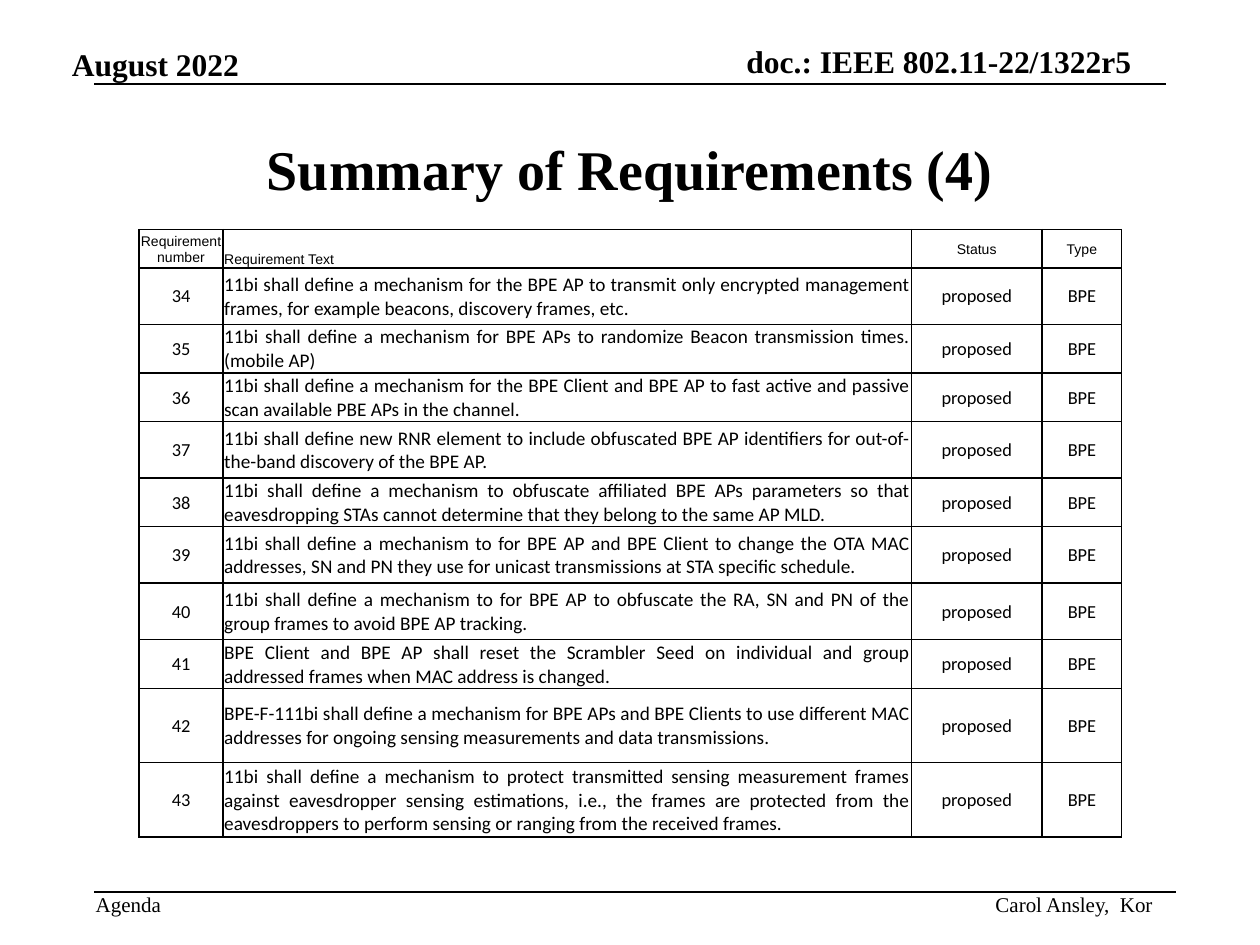
from lxml.etree import SubElement
from pptx import Presentation
from pptx.dml.color import RGBColor
from pptx.enum.shapes import MSO_CONNECTOR
from pptx.enum.text import MSO_ANCHOR as Anchor, PP_ALIGN as Align
from pptx.oxml.ns import qn
from pptx.util import Cm, Pt

BLACK = "000000"
SERIF, SANS, BODY = "Times New Roman", "Arial", "Calibri"

HEADINGS = ["Requirement number", "Requirement Text", "Status", "Type"]
FIRST_NUMBER = 34
STATUS, TYPE = "proposed", "BPE"
COLUMN_WIDTHS = [1.7, 13.87, 2.64, 1.6]
HEADING_HEIGHT, LOW, MEDIUM, HIGH = 0.77, 0.98, 1.14, 1.5
REQUIREMENTS = [
    (MEDIUM, "11bi shall define a mechanism for the BPE AP to transmit only encrypted "
             "management frames, for example beacons, discovery frames, etc."),
    (LOW, "11bi shall define a mechanism for BPE APs to randomize Beacon transmission "
          "times. (mobile AP)"),
    (LOW, "11bi shall define a mechanism for the BPE Client and BPE AP to fast active "
          "and passive scan available PBE APs in the channel."),
    (MEDIUM, "11bi shall define new RNR element to include obfuscated BPE AP identifiers "
             "for out-of-the-band discovery of the BPE AP."),
    (LOW, "11bi shall define a mechanism to obfuscate affiliated BPE APs parameters so "
          "that eavesdropping STAs cannot determine that they belong to the same AP MLD."),
    (MEDIUM, "11bi shall define a mechanism to for BPE AP and BPE Client to change the "
             "OTA MAC addresses, SN and PN they use for unicast transmissions at STA "
             "specific schedule."),
    (MEDIUM, "11bi shall define a mechanism to for BPE AP to obfuscate the RA, SN and PN "
             "of the group frames to avoid BPE AP tracking."),
    (LOW, "BPE Client and BPE AP shall reset the Scrambler Seed on individual and group "
          "addressed frames when MAC address is changed."),
    (HIGH, "BPE-F-111bi shall define a mechanism for BPE APs and BPE Clients to use "
           "different MAC addresses for ongoing sensing measurements and data "
           "transmissions."),
    (HIGH, "11bi shall define a mechanism to protect transmitted sensing measurement "
           "frames against eavesdropper sensing estimations, i.e., the frames are "
           "protected from the eavesdroppers to perform sensing or ranging from the "
           "received frames."),
]


def color(hex_value):
    return RGBColor.from_string(hex_value)


class SlideBuilder:
    def __init__(self, slide, ink=BLACK, line_width=1):
        self.slide = slide
        self.ink = ink
        self.line_width = Pt(line_width)

    def set_text(self, text_frame, text, size, font, align, bold=False):
        text_frame.text = text
        paragraph = text_frame.paragraphs[0]
        paragraph.alignment = align
        for run in paragraph.runs:
            run.font.size = Pt(size)
            run.font.name = font
            run.font.bold = bold
            run.font.color.rgb = color(self.ink)

    def text(self, box, text, size, align=Align.LEFT, anchor=Anchor.BOTTOM,
             bold=False, wrap=False):
        shape = self.slide.shapes.add_textbox(*map(Cm, box))
        frame = shape.text_frame
        frame.margin_left = frame.margin_right = 0
        frame.margin_top = frame.margin_bottom = 0
        frame.word_wrap = wrap
        frame.vertical_anchor = anchor
        self.set_text(frame, text, size, SERIF, align, bold)

    def rule(self, left, right, y):
        line = self.slide.shapes.add_connector(
            MSO_CONNECTOR.STRAIGHT, Cm(left), Cm(y), Cm(right), Cm(y))
        line.line.color.rgb = color(self.ink)
        line.line.width = self.line_width
        SubElement(line._element.spPr, qn("a:effectLst"))

    def table(self, left, top, widths, heights):
        shape = self.slide.shapes.add_table(
            len(heights), len(widths), Cm(left), Cm(top),
            Cm(sum(widths)), Cm(sum(heights)))
        table = shape.table
        table.first_row = table.horz_banding = False
        for column, width in zip(table.columns, widths):
            column.width = Cm(width)
        for row, height in zip(table.rows, heights):
            row.height = Cm(height)
        return table

    def cell(self, cell, text, size, font, align=Align.CENTER, anchor=Anchor.MIDDLE):
        cell.margin_left = cell.margin_right = cell.margin_top = Cm(0.02)
        cell.margin_bottom = 0
        cell.vertical_anchor = anchor
        self.set_text(cell.text_frame, text, size, font, align)
        properties = cell._tc.get_or_add_tcPr()
        for side in ("a:lnL", "a:lnR", "a:lnT", "a:lnB"):
            border = SubElement(properties, qn(side), w=str(self.line_width))
            fill = SubElement(border, qn("a:solidFill"))
            SubElement(fill, qn("a:srgbClr"), val=self.ink)
        cell.fill.background()


def main():
    presentation = Presentation()
    presentation.slide_width, presentation.slide_height = Cm(25.4), Cm(19.05)
    slide = presentation.slides.add_slide(presentation.slide_layouts[6])
    builder = SlideBuilder(slide)

    # Header
    builder.text((1.45, 0.91, 3.4, 0.76), "August 2022", 18, bold=True)
    builder.text((14.94, 0.84, 7.87, 0.76), "doc.: IEEE 802.11-22/1322r5", 18,
                 Align.RIGHT, bold=True)
    builder.rule(1.9, 23.5, 1.7)

    # Footer
    builder.rule(1.9, 23.7, 17.98)
    builder.text((1.93, 17.98, 1.35, 0.51), "Agenda", 12, anchor=Anchor.TOP)
    builder.text((19.94, 17.98, 3.3, 0.51), "Carol Ansley,  Kor", 12, Align.RIGHT)

    # Title
    builder.text((1.9, 1.9, 21.6, 2.97), "Summary of Requirements (4)", 32,
                 Align.CENTER, Anchor.MIDDLE, bold=True, wrap=True)

    # Requirements table
    heights = [HEADING_HEIGHT] + [height for height, _ in REQUIREMENTS]
    table = builder.table(2.8, 4.63, COLUMN_WIDTHS, heights)
    for column, heading in enumerate(HEADINGS):
        is_text = column == 1
        builder.cell(table.cell(0, column), heading, 8, SANS,
                     Align.LEFT if is_text else Align.CENTER,
                     Anchor.BOTTOM if is_text else Anchor.MIDDLE)
    for row, (_, requirement) in enumerate(REQUIREMENTS, start=1):
        number = str(FIRST_NUMBER + row - 1)
        for column, value in enumerate((number, requirement, STATUS, TYPE)):
            is_text = column == 1
            builder.cell(table.cell(row, column), value, 11 if is_text else 10.5, BODY,
                         Align.JUSTIFY if is_text else Align.CENTER)

    presentation.save("out.pptx")


if __name__ == "__main__":
    main()
